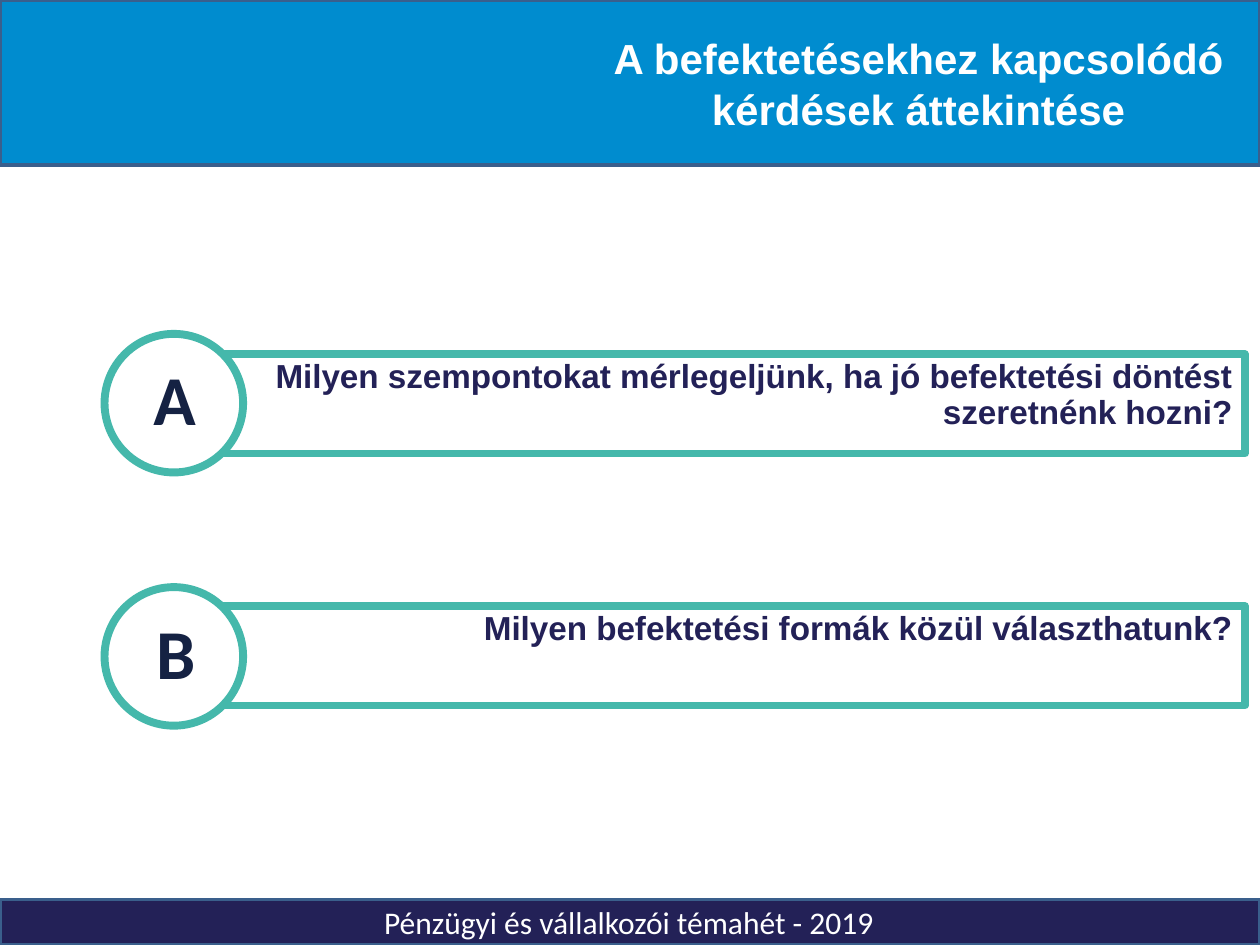
from dataclasses import dataclass

from pptx import Presentation
from pptx import util as u
from pptx.dml.color import RGBColor
from pptx.enum import shapes, text


@dataclass(frozen=True)
class Theme:
    header: RGBColor = RGBColor(0x00, 0x8C, 0xCF)
    navy: RGBColor = RGBColor(0x23, 0x21, 0x57)
    band_line: RGBColor = RGBColor(0x3A, 0x5F, 0x8C)
    teal: RGBColor = RGBColor(0x45, 0xB8, 0xAB)
    letter: RGBColor = RGBColor(0x15, 0x22, 0x43)
    white: RGBColor = RGBColor(0xFF, 0xFF, 0xFF)
    heading_font: str = "Arial"
    body_font: str = "Calibri"
    title_size: int = 24
    question_size: int = 19
    letter_size: int = 40
    footer_size: int = 18


@dataclass(frozen=True)
class Box:
    left: float
    top: float
    width: float
    height: float

    def lengths(self) -> list:
        return [u.Inches(v) for v in (self.left, self.top, self.width, self.height)]


@dataclass(frozen=True)
class Question:
    letter: str
    wording: str
    bar: Box
    circle_top: float
    letter_box: Box


THEME = Theme()
CIRCLE_LEFT, CIRCLE_SIZE = 0.83, 1.1

QUESTIONS = [
    Question("A", "Milyen szempontokat mérlegeljünk, ha jó befektetési döntést szeretnénk hozni?",
             Box(1.18, 2.81, 8.7, 0.79), 2.65, Box(1.12, 2.77, 0.47, 0.77)),
    Question("B", "Milyen befektetési formák közül választhatunk?",
             Box(1.59, 4.81, 8.29, 0.79), 4.66, Box(1.14, 4.79, 0.55, 0.77)),
]


def add_outlined(slide, kind, box: Box, fill, line: RGBColor, weight: float):
    shape = slide.shapes.add_shape(kind, *box.lengths())
    shape.shadow.inherit = False
    if fill is None:
        shape.fill.background()
    else:
        shape.fill.solid()
        shape.fill.fore_color.rgb = fill
    shape.line.color.rgb = line
    shape.line.width = u.Pt(weight)
    return shape


def write(frame, wording: str, font: str, size: int, color: RGBColor,
          bold: bool = False, align=text.PP_ALIGN.LEFT,
          anchor=text.MSO_ANCHOR.TOP, wrap: bool = True):
    frame.word_wrap = wrap
    frame.vertical_anchor = anchor
    paragraph = frame.paragraphs[0]
    paragraph.alignment = align
    run = paragraph.add_run()
    run.text = wording
    run.font.name = font
    run.font.size = u.Pt(size)
    run.font.bold = bold
    run.font.color.rgb = color
    return paragraph


def add_label(slide, box: Box, wording: str, size: int, color: RGBColor, bold: bool) -> None:
    label = slide.shapes.add_textbox(*box.lengths())
    write(label.text_frame, wording, THEME.body_font, size, color, bold, wrap=False)


def add_bands(slide) -> None:
    for box, fill in ((Box(0, 0, 10, 1.31), THEME.header),
                      (Box(0, 7.14, 10, 0.36), THEME.navy)):
        add_outlined(slide, shapes.MSO_SHAPE.RECTANGLE, box, fill, THEME.band_line, 2)


def add_title(slide, wording: str) -> None:
    title = slide.shapes.title
    # Bring the title in front of the header band
    title.element.getparent().append(title.element)
    title.left, title.top, title.width, title.height = Box(4.69, 0, 5.2, 1.32).lengths()
    write(title.text_frame, wording, THEME.heading_font, THEME.title_size, THEME.white,
          True, text.PP_ALIGN.CENTER, text.MSO_ANCHOR.MIDDLE)


def add_question(slide, question: Question) -> None:
    bar = add_outlined(slide, shapes.MSO_SHAPE.RECTANGLE, question.bar, None, THEME.teal, 4.5)
    paragraph = write(bar.text_frame, question.wording, THEME.heading_font,
                      THEME.question_size, THEME.navy, True, text.PP_ALIGN.RIGHT)
    paragraph.line_spacing = 0.9
    circle = Box(CIRCLE_LEFT, question.circle_top, CIRCLE_SIZE, CIRCLE_SIZE)
    add_outlined(slide, shapes.MSO_SHAPE.OVAL, circle, THEME.white, THEME.teal, 4.5)


def main() -> None:
    deck = Presentation()
    deck.slide_width, deck.slide_height = u.Inches(10), u.Inches(7.5)
    slide = deck.slides.add_slide(deck.slide_layouts[5])

    # Header and footer
    add_bands(slide)
    add_label(slide, Box(2.95, 7.12, 4.09, 0.4), "Pénzügyi és vállalkozói témahét - 2019",
              THEME.footer_size, THEME.white, False)
    add_title(slide, "A befektetésekhez kapcsolódó kérdések áttekintése")

    # Questions, then their letters on top
    for question in QUESTIONS:
        add_question(slide, question)
    for question in QUESTIONS:
        add_label(slide, question.letter_box, question.letter,
                  THEME.letter_size, THEME.letter, True)

    deck.save("out.pptx")


if __name__ == "__main__":
    main()
